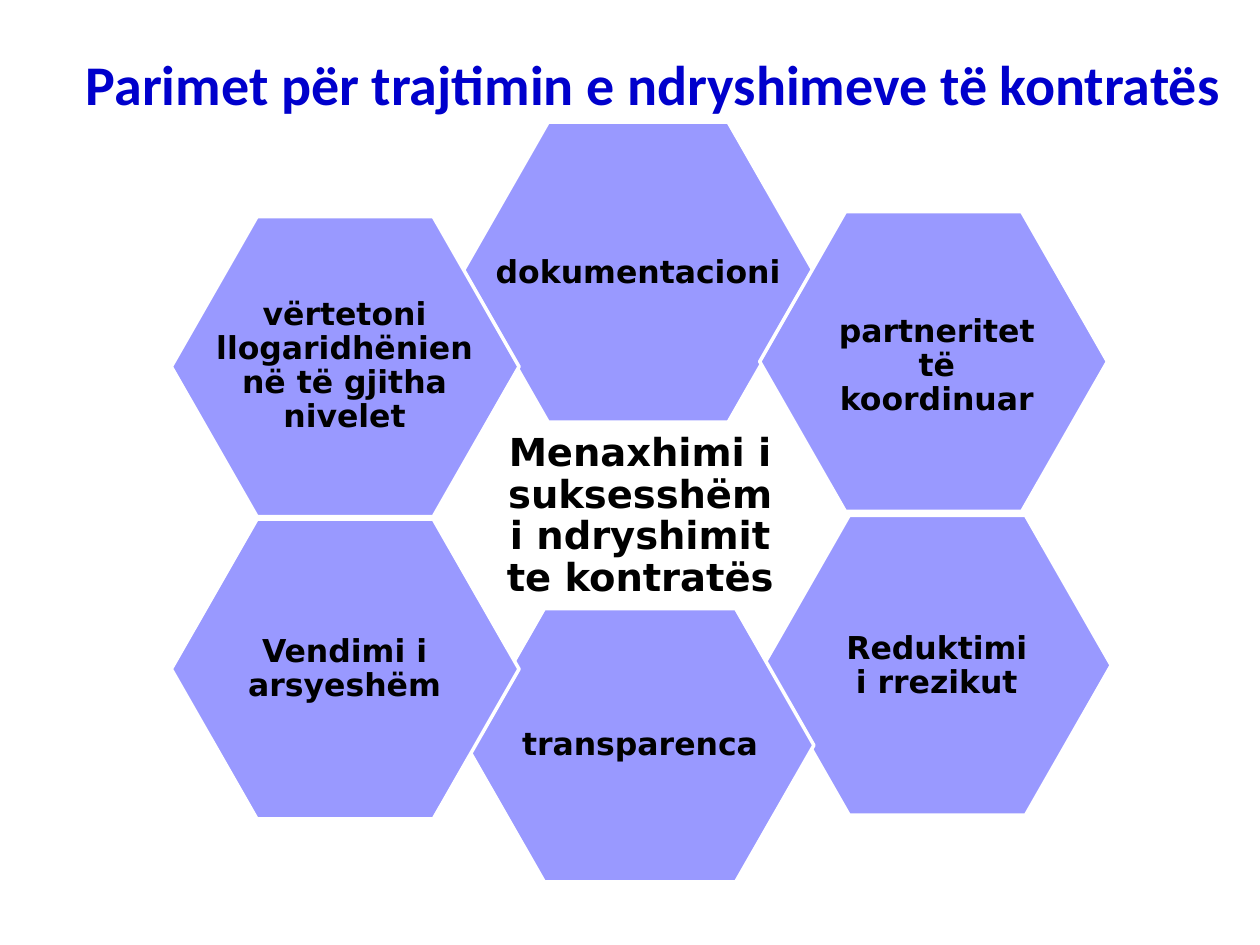
"""Build a slide with six principle hexagons around a central message."""
import pptx
import pptx.dml.color
import pptx.enum.shapes
import pptx.enum.text
import pptx.util

Inches = pptx.util.Inches
Pt = pptx.util.Pt
MSO_ANCHOR = pptx.enum.text.MSO_ANCHOR
MSO_AUTO_SIZE = pptx.enum.text.MSO_AUTO_SIZE
PP_ALIGN = pptx.enum.text.PP_ALIGN


def rgb(value):
    return pptx.dml.color.RGBColor.from_string(value)


def add_label(shapes, text, box, size, wrap=True):
    tb = shapes.add_textbox(*map(Inches, box))
    tf = tb.text_frame
    tf.word_wrap = wrap
    tf.auto_size = MSO_AUTO_SIZE.NONE
    tf.vertical_anchor = MSO_ANCHOR.MIDDLE
    tf.margin_left = tf.margin_right = Inches(0.01)
    tf.margin_top = tf.margin_bottom = Inches(0.01)
    p = tf.paragraphs[0]
    p.text = text
    p.alignment = PP_ALIGN.CENTER
    p.line_spacing = 0.9
    p.font.name = "DejaVu Sans"
    p.font.size = Pt(size)
    p.font.bold = True
    p.font.color.rgb = rgb("000000")


prs = pptx.Presentation()
prs.slide_width = Inches(10)
prs.slide_height = Inches(7.5)
s = prs.slides.add_slide(prs.slide_layouts[5])

title = s.shapes.title
title.left, title.top = Inches(0.58), Inches(0.34)
title.width, title.height = Inches(9.39), Inches(0.64)
tf = title.text_frame
tf.word_wrap = True
tf.auto_size = MSO_AUTO_SIZE.NONE
tf.vertical_anchor = MSO_ANCHOR.TOP
p = tf.paragraphs[0]
p.text = "Parimet për trajtimin e ndryshimeve të kontratës"
p.alignment = PP_ALIGN.LEFT
p.font.name = "Calibri"
p.font.size = Pt(32)
p.font.bold = True
p.font.color.rgb = rgb("0000CC")

add_label(s.shapes, "Menaxhimi i suksesshëm i ndryshimit te kontratës",
          (3.94, 3.69, 2.28, 0.82), 22)

principles = [
    ("dokumentacioni", (3.67, 0.97, 2.79, 2.38), (3.9, 2.02, 2.33, 0.3), False),
    ("partneritet të koordinuar", (6.03, 1.68, 2.76, 2.38), (6.55, 2.49, 1.77, 0.84), True),
    ("Reduktimi i rrezikut", (6.06, 4.09, 2.76, 2.38), (6.65, 5, 1.57, 0.57), True),
    ("transparenca", (3.7, 4.83, 2.76, 2.17), (4.13, 5.78, 1.9, 0.27), False),
    ("Vendimi i arsyeshëm", (1.36, 4.12, 2.76, 2.38), (1.95, 5.03, 1.57, 0.57), True),
    ("vërtetoni llogaridhënien në të gjitha nivelet", (1.36, 1.72, 2.76, 2.38),
     (1.67, 2.35, 2.13, 1.11), True),
]
for text, hexagon, label, wrap in principles:
    group = s.shapes.add_group_shape()
    sp = group.shapes.add_shape(pptx.enum.shapes.MSO_SHAPE.HEXAGON, *map(Inches, hexagon))
    sp.adjustments[0] = 0.286
    sp.shadow.inherit = False
    sp.fill.solid()
    sp.fill.fore_color.rgb = rgb("9999FF")
    sp.line.color.rgb = rgb("FFFFFF")
    sp.line.width = Pt(2)
    add_label(group.shapes, text, label, 18, wrap)

prs.save("out.pptx")
